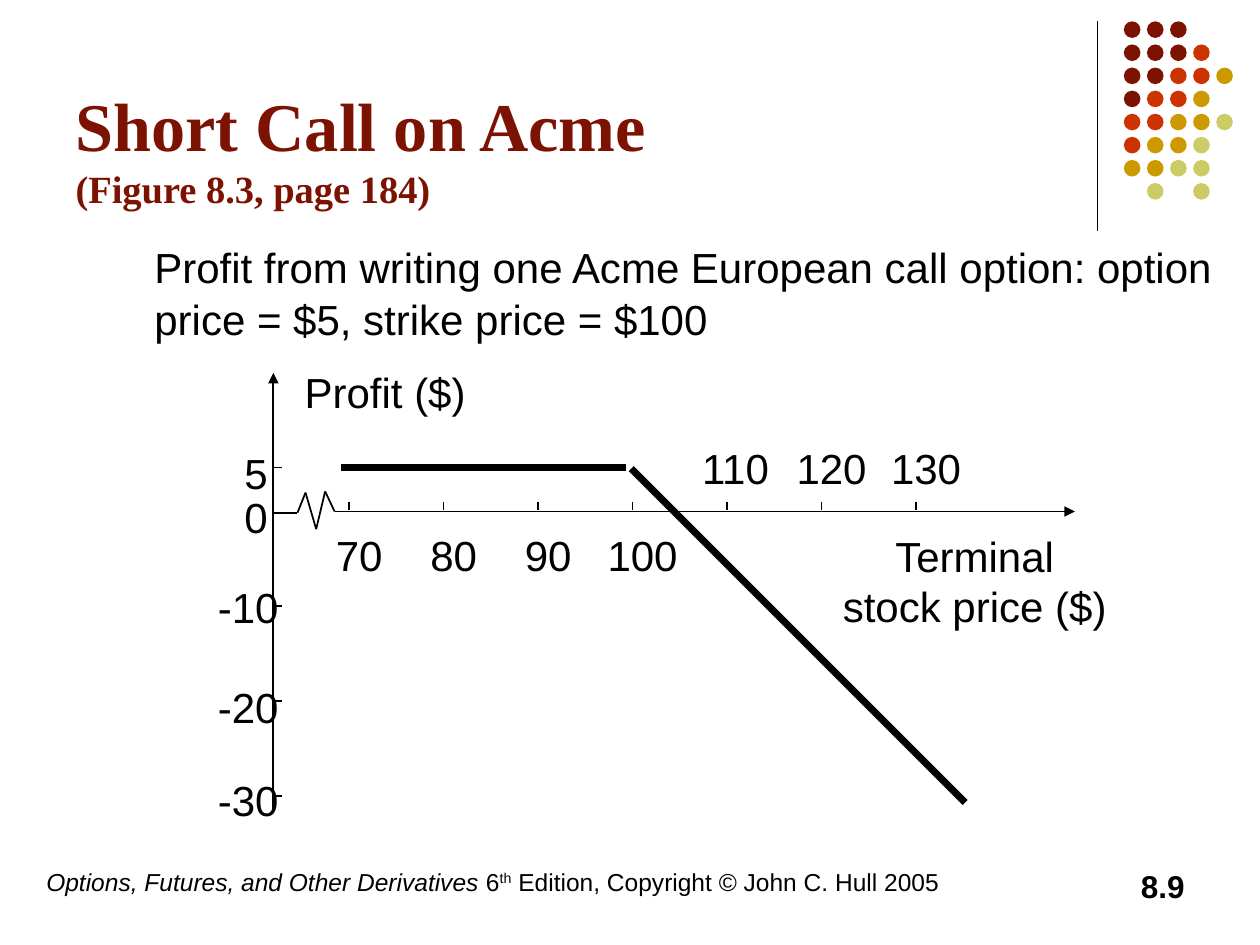
import itertools

import lxml.etree
import pptx
import pptx.dml.color
import pptx.enum.shapes
import pptx.enum.text
import pptx.oxml.ns
import pptx.util

Pt = pptx.util.Pt
ALIGN = pptx.enum.text.PP_ALIGN
ANCHOR = pptx.enum.text.MSO_ANCHOR

THEME = {
    "ink": "000000",
    "dots": {"m": "7C1302", "r": "CC3300", "g": "CC9900", "y": "CCCC66"},
    "heading": {"name": "Times New Roman", "size": Pt(39), "bold": True},
    "subheading": {"name": "Times New Roman", "size": Pt(22), "bold": True},
    "text": {"name": "Arial", "size": Pt(24)},
    "footer": {"name": "Arial", "size": Pt(14)},
    "number": {"name": "Arial", "size": Pt(18), "bold": True},
    "thin": 1,
    "payoff": 4,
}

# Content
TITLE = "Short Call on Acme"
FIGURE = "(Figure 8.3, page 184)"
SUMMARY = ("Profit from writing one Acme European call option: "
           "option price = $5, strike price = $100")
PROFIT_AXIS = ["Profit ($)"]
PRICE_AXIS = ["Terminal", "stock price ($)"]
PRICES = [70, 80, 90, 100, 110, 120, 130]
STRIKE = 100
# label, left and top of the label, height of the tick (None: no tick)
PROFITS = [
    ("-30", 117.4, 439.2, 455),
    ("-20", 117.4, 385.9, 400.5),
    ("-10", 117.4, 329, 346.3),
    ("0", 132.5, 277.2, None),
    ("5", 132.5, 252, 267.1),
]
AXIS_BREAK = [(155.5, 293), (170, 293), (174.6, 281.5), (180.7, 302.4),
              (185.8, 280.8), (191.2, 292.3)]
PAYOFF = [((195.1, 267.1), (357.8, 267.1)), ((360.7, 267.8), (551.5, 458.6))]
BOOK = "Options, Futures, and Other Derivatives"
EDITION = " 6"
ORDINAL = "th"
COPYRIGHT = " Edition, Copyright © John C. Hull 2005"
SLIDE_NUMBER = "8.9"
DOT_ROWS = ["mmm", "mmmr", "mmrrg", "mrrg", "rrggy", "rggy", "ggyy", " y y"]

# Geometry in points
DOT_LEFT, DOT_TOP, DOT_PITCH, DOT_SIZE = 642.2, 12.2, 13.2, 9.5
AXIS_X, AXIS_Y = 156.2, 292.3
PRICE_TICK, PRICE_STEP = 199.4, 54
DIGIT_WIDTH, SIDE_INSETS, LABEL_HEIGHT = 13.4, 14.4, 36


def rgb(code):
    return pptx.dml.color.RGBColor.from_string(code)


def add_run(paragraph, text, formats, color=THEME["ink"], **extra):
    run = paragraph.add_run()
    run.text = text
    for attribute, value in {**formats, **extra}.items():
        setattr(run.font, attribute, value)
    run.font.color.rgb = rgb(color)
    return run


def place(shape, left, top, width, height):
    box = {"left": left, "top": top, "width": width, "height": height}
    for attribute, value in box.items():
        setattr(shape, attribute, Pt(value))


def add_box(slide, left, top, width, height, wrap=False):
    """Add an empty text box and return its text frame."""
    frame = slide.shapes.add_textbox(
        Pt(left), Pt(top), Pt(width), Pt(height)).text_frame
    frame.word_wrap = wrap
    return frame


def add_label(slide, lines, left, top, width, height=LABEL_HEIGHT,
              align=ALIGN.LEFT):
    frame = add_box(slide, left, top, width, height)
    for index, line in enumerate(lines):
        paragraph = frame.add_paragraph() if index else frame.paragraphs[0]
        paragraph.alignment = align
        add_run(paragraph, line, THEME["text"])


def label_width(text):
    return len(text) * DIGIT_WIDTH + SIDE_INSETS


def add_line(slide, start, end, width=THEME["thin"], arrow=None):
    """Draw a straight line; arrow is headEnd (at start) or tailEnd (at end)."""
    line = slide.shapes.add_connector(
        pptx.enum.shapes.MSO_CONNECTOR.STRAIGHT,
        *(Pt(value) for value in (*start, *end)))
    line.line.color.rgb = rgb(THEME["ink"])
    line.line.width = Pt(width)
    qn = pptx.oxml.ns.qn
    properties = line._element.spPr
    if arrow:
        lxml.etree.SubElement(
            properties.find(qn("a:ln")), qn("a:" + arrow), type="triangle")
    lxml.etree.SubElement(properties, qn("a:effectLst"))


def add_decoration(slide):
    add_line(slide, (627.1, 12.2), (627.1, 131.8), 0.75)
    for row, colors in enumerate(DOT_ROWS):
        for column, key in enumerate(colors):
            if key == " ":
                continue
            dot = slide.shapes.add_shape(
                pptx.enum.shapes.MSO_SHAPE.OVAL,
                Pt(DOT_LEFT + column * DOT_PITCH),
                Pt(DOT_TOP + row * DOT_PITCH), Pt(DOT_SIZE), Pt(DOT_SIZE))
            dot.shadow.inherit = False
            dot.fill.solid()
            dot.fill.fore_color.rgb = rgb(THEME["dots"][key])
            dot.line.fill.background()


def fill_title(title):
    place(title, 36, 24, 636, 120)
    frame = title.text_frame
    frame.auto_size = pptx.enum.text.MSO_AUTO_SIZE.NONE
    frame.vertical_anchor = ANCHOR.MIDDLE
    paragraph = frame.paragraphs[0]
    paragraph.alignment = ALIGN.LEFT
    color = THEME["dots"]["m"]
    add_run(paragraph, TITLE, THEME["heading"], color)
    paragraph.add_line_break()
    add_run(paragraph, FIGURE, THEME["subheading"], color)


def fill_summary(body):
    place(body, 54, 126, 648, 324)
    frame = body.text_frame
    frame.auto_size = pptx.enum.text.MSO_AUTO_SIZE.NONE
    frame.vertical_anchor = ANCHOR.TOP
    frame.margin_top = Pt(10.8)
    paragraph = frame.paragraphs[0]
    paragraph.space_before = Pt(0)
    paragraph.line_spacing = Pt(30)
    add_run(paragraph, SUMMARY, THEME["text"])
    properties = paragraph._p.get_or_add_pPr()
    properties.set("marL", str(Pt(27)))
    properties.set("indent", "0")
    lxml.etree.SubElement(properties, pptx.oxml.ns.qn("a:buNone"))


def add_footer(slide):
    credit = add_box(slide, 19.4, 491.8, 595.4, 36, True).paragraphs[0]
    add_run(credit, BOOK, THEME["footer"], italic=True)
    add_run(credit, EDITION, THEME["footer"])
    ordinal = add_run(credit, ORDINAL, THEME["footer"])
    ordinal.font._element.set("baseline", "30000")
    add_run(credit, COPYRIGHT, THEME["footer"])
    number = add_box(slide, 516.2, 491.8, 167.8, 36, True).paragraphs[0]
    number.alignment = ALIGN.RIGHT
    add_run(number, SLIDE_NUMBER, THEME["number"])


def add_payoff_diagram(slide):
    for text, left, top, tick in PROFITS:
        add_label(slide, [text], left, top, label_width(text))
        if tick:
            add_line(slide, (AXIS_X, tick), (AXIS_X + 5, tick))
    add_line(slide, (AXIS_X, 213.1), (AXIS_X, 464.4), arrow="headEnd")
    add_line(slide, (191.5, AXIS_Y), (614.2, AXIS_Y), arrow="tailEnd")
    for start, end in itertools.pairwise(AXIS_BREAK):
        add_line(slide, start, end)
    for index, price in enumerate(PRICES):
        x = PRICE_TICK + index * PRICE_STEP
        add_line(slide, (x, 286.6), (x, 291.6))
        width = label_width(str(price))
        top = 249.1 if price > STRIKE else 298.8
        add_label(slide, [str(price)], x + 6 - width / 2, top, width)
    add_label(slide, PROFIT_AXIS, 167, 205.9, 106.6)
    add_label(slide, PRICE_AXIS, 474.5, 299.5, 164.9, 64.8, ALIGN.CENTER)
    for start, end in PAYOFF:
        add_line(slide, start, end, THEME["payoff"])


def main():
    deck = pptx.Presentation()
    deck.slide_width, deck.slide_height = Pt(720), Pt(540)
    slide = deck.slides.add_slide(deck.slide_layouts[1])
    add_decoration(slide)
    add_footer(slide)
    fill_title(slide.shapes.title)
    fill_summary(slide.placeholders[1])
    add_payoff_diagram(slide)
    deck.save("out.pptx")


if __name__ == "__main__":
    main()
